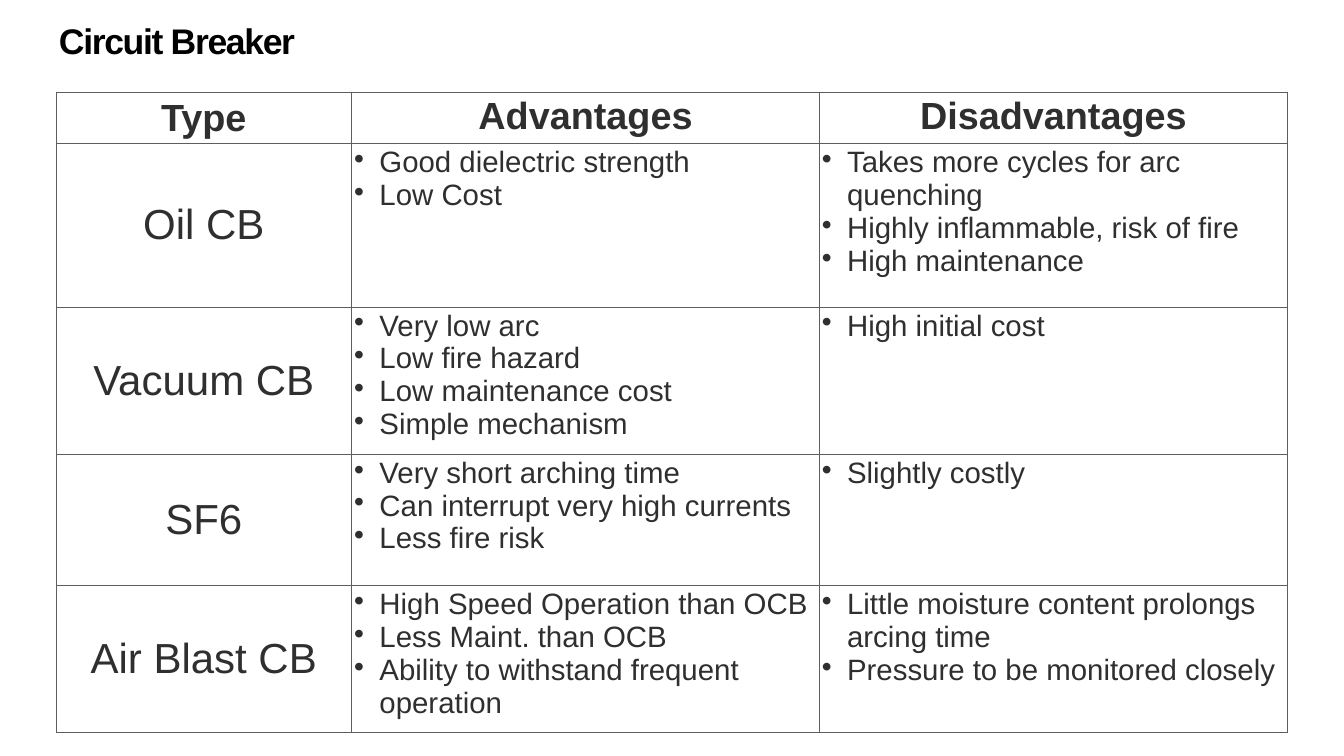
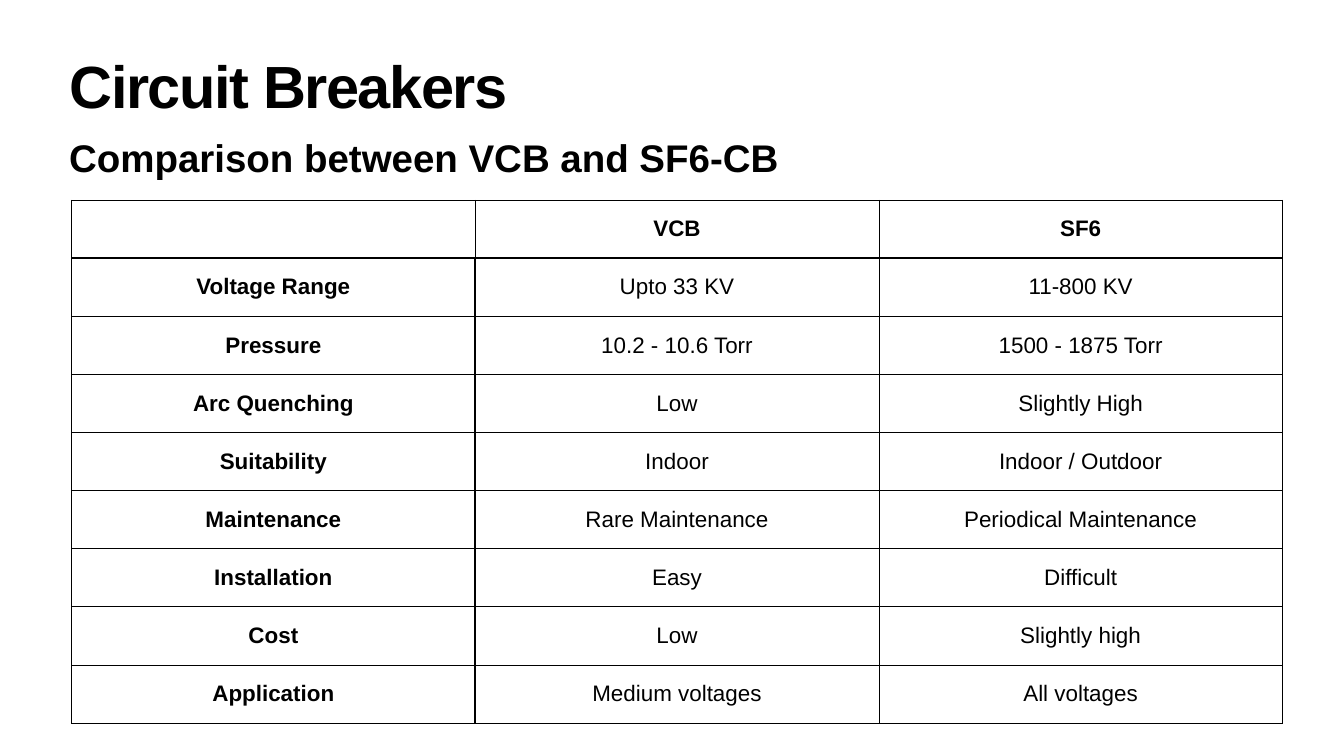
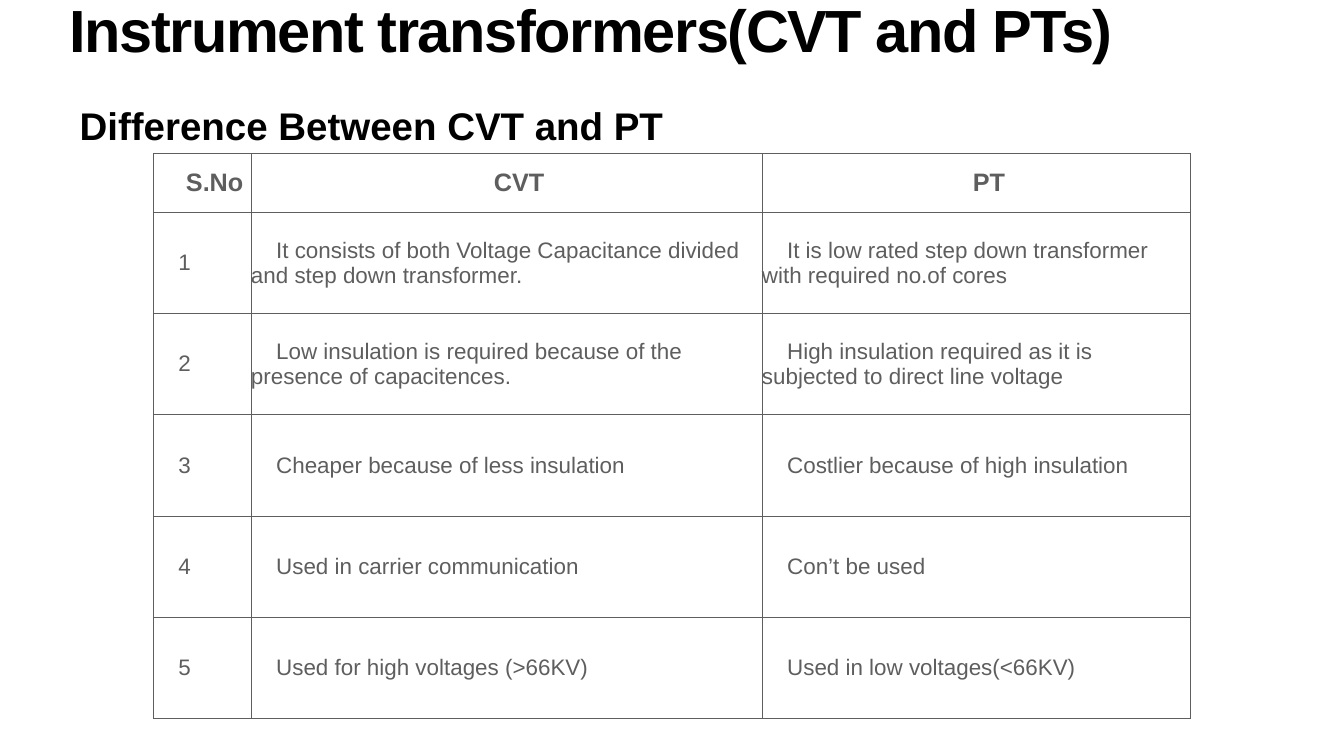
from lxml import etree
from pptx import Presentation
from pptx.dml.color import RGBColor
from pptx.enum.text import MSO_ANCHOR, MSO_AUTO_SIZE, PP_ALIGN
from pptx.oxml.ns import qn
from pptx.util import Inches, Pt

LEFT, MID = PP_ALIGN.LEFT, PP_ALIGN.CENTER
TOP, CENTER = MSO_ANCHOR.TOP, MSO_ANCHOR.MIDDLE
FIXED = MSO_AUTO_SIZE.NONE
FACE = "Arial"
BLACK, DARK, GREY = "000000", "2F2F2F", "5E5E5E"
THIN, THICK = 1, 3
TITLE_ONLY, WITH_BODY = 5, 1

# Content
TYPES = [
    ("Type", "Advantages", "Disadvantages"),
    ("Oil CB",
     ["Good dielectric strength", "Low Cost"],
     ["Takes more cycles for arc quenching", "Highly inflammable, risk of fire",
      "High maintenance"]),
    ("Vacuum CB",
     ["Very low arc", "Low fire hazard", "Low maintenance cost", "Simple mechanism"],
     ["High initial cost"]),
    ("SF6",
     ["Very short arching time", "Can interrupt very high currents", "Less fire risk"],
     ["Slightly costly"]),
    ("Air Blast CB",
     ["High Speed Operation than OCB", "Less Maint. than OCB",
      "Ability to withstand frequent operation"],
     ["Little moisture content prolongs arcing time",
      "Pressure to be monitored closely"]),
]
BREAKERS = [
    ("", "VCB", "SF6"),
    ("Voltage Range", "Upto 33 KV", "11-800 KV"),
    ("Pressure", "10.2 - 10.6 Torr", "1500 - 1875 Torr"),
    ("Arc Quenching", "Low", "Slightly High"),
    ("Suitability", "Indoor", "Indoor / Outdoor"),
    ("Maintenance", "Rare Maintenance", "Periodical Maintenance"),
    ("Installation", "Easy", "Difficult"),
    ("Cost", "Low", "Slightly high"),
    ("Application", "Medium voltages", "All voltages"),
]
FORMERS = [
    ("S.No", "CVT", "PT"),
    ("1", "It consists of both Voltage Capacitance divided and step down transformer.",
     "It is low rated step down transformer with required no.of cores"),
    ("2", "Low insulation is required because of the presence of capacitences.",
     "High insulation required as it is subjected to direct line voltage"),
    ("3", "Cheaper because of less insulation", "Costlier because of high insulation"),
    ("4", "Used in carrier communication", "Con’t be used"),
    ("5", "Used for high voltages (>66KV)", "Used in low voltages(<66KV)"),
]


def look(size, color=BLACK, bold=False, align=LEFT, anchor=CENTER, pad=0.05,
         indent=(0, 0), bullet=None, line=1.0, track=0):
    return dict(font=dict(name=FACE, size=Pt(size), bold=bold),
                para=dict(alignment=align, line_spacing=line, space_before=Pt(0)),
                color=color, anchor=anchor, pad=pad, indent=indent,
                bullet=bullet, track=track)


# Shared looks
TITLE = look(85, bold=True, anchor=TOP, pad=0.06, line=0.8, track=-2)
SMALL = look(50.8, bold=True, anchor=TOP, pad=0.06, line=0.8, track=-1.9)
SUB = look(55, bold=True, anchor=TOP)
LABEL = look(32, bold=True, align=MID, pad=0.06)
STEP = (0, 0.5)
ENTRY = look(32, GREY, pad=0, indent=STEP)

SLIDES = [
    dict(title="Circuit Breaker", spot=(1.11, 0.47, 24.03, 0.94), style=SMALL,
         rows=TYPES, at=(1.11, 1.84), wide=[5.87, 9.28, 9.29],
         high=[1.01, 3.24, 2.92, 2.61, 2.92], edge=GREY, rule=THIN,
         corner=look(54, DARK, True, MID),
         head=look(54, DARK, True, MID, TOP),
         side=look(60, DARK, align=MID),
         body=look(42, DARK, anchor=TOP, indent=(0.5, -0.5), bullet="•")),
    dict(title="Circuit Breakers", spot=(1.32, 1.18, 24.03, 1.57), style=TITLE,
         sub="Comparison between VCB and SF6-CB", place=(1.32, 2.6, 24.03, 1.02),
         rows=BREAKERS, at=(1.42, 3.97), wide=[8.01] * 3, high=[1.153] * 9,
         edge=BLACK, rule=THICK, corner=LABEL, head=LABEL, side=LABEL,
         body=look(32, align=MID, pad=0.06)),
    dict(title="Instrument transformers(CVT and PTs)",
         spot=(1.32, 0.07, 24.03, 1.57), style=TITLE,
         sub="Difference Between CVT and PT", place=(1.53, 1.98, 24.03, 1.02),
         rows=FORMERS, at=(3.04, 3.05), wide=[1.94, 10.14, 8.51],
         high=[1.16] + [2.01] * 5, edge=GREY, rule=THIN,
         corner=look(36, GREY, True, MID, pad=0, indent=STEP),
         head=look(36, GREY, True, MID, pad=0, indent=STEP),
         side=ENTRY, body=ENTRY),
]


def paint(color):
    return RGBColor.from_string(color)


def write(frame, text, form):
    """Fill a text frame, one paragraph per line."""
    frame.text = text
    for para in frame.paragraphs:
        for key, val in form["para"].items():
            setattr(para, key, val)
        props = para._p.get_or_add_pPr()
        for key, val in zip(("marL", "indent"), form["indent"]):
            props.set(key, str(Inches(val)))
        if form["bullet"]:
            etree.SubElement(props, qn("a:buChar"), char=form["bullet"])
        else:
            etree.SubElement(props, qn("a:buNone"))
        for run in para.runs:
            for key, val in form["font"].items():
                setattr(run.font, key, val)
            run.font.color.rgb = paint(form["color"])
            if form["track"]:
                run._r.get_or_add_rPr().set("spc", str(round(form["track"] * 100)))


def inset(owner, form):
    for side in ("left", "right", "top", "bottom"):
        setattr(owner, "margin_" + side, Inches(form["pad"]))
    owner.vertical_anchor = form["anchor"]


def put(shape, text, spot, form):
    """Place and format a placeholder."""
    shape.left, shape.top, shape.width, shape.height = map(Inches, spot)
    frame = shape.text_frame
    frame.auto_size, frame.word_wrap = FIXED, True
    inset(frame, form)
    write(frame, text, form)


def border(cell, row, col, color, rule):
    """Draw cell edges; rule is the weight around the head row and side column."""
    thick = {"L": row > 0 and col == 1, "R": row > 0 and col == 0,
             "T": row == 1, "B": row == 0}
    props = cell._tc.get_or_add_tcPr()
    for side, strong in thick.items():
        line = etree.SubElement(props, qn("a:ln" + side),
                                w=str(Pt(rule if strong else THIN)))
        fill = etree.SubElement(line, qn("a:solidFill"))
        etree.SubElement(fill, qn("a:srgbClr"), val=color)


def grid(slide, spec):
    rows, wide, high = spec["rows"], spec["wide"], spec["high"]
    size = map(Inches, (*spec["at"], sum(wide), sum(high)))
    table = slide.shapes.add_table(len(rows), len(wide), *size).table
    table.first_row = table.horz_banding = False
    for col, width in zip(table.columns, wide):
        col.width = Inches(width)
    for row, height in zip(table.rows, high):
        row.height = Inches(height)
    for r, line in enumerate(rows):
        for c, text in enumerate(line):
            cell = table.cell(r, c)
            kind = (("corner", "head"), ("side", "body"))[r > 0][c > 0]
            border(cell, r, c, spec["edge"], spec["rule"])
            cell.fill.background()
            inset(cell, spec[kind])
            if text:
                text = text if isinstance(text, str) else "\n".join(text)
                write(cell.text_frame, text, spec[kind])


def main():
    deck = Presentation()
    deck.slide_width, deck.slide_height = Inches(26.67), Inches(15)
    for spec in SLIDES:
        layout = WITH_BODY if "sub" in spec else TITLE_ONLY
        slide = deck.slides.add_slide(deck.slide_layouts[layout])
        put(slide.shapes.title, spec["title"], spec["spot"], spec["style"])
        if "sub" in spec:
            put(slide.placeholders[1], spec["sub"], spec["place"], SUB)
        grid(slide, spec)
    deck.save("out.pptx")


if __name__ == "__main__":
    main()
